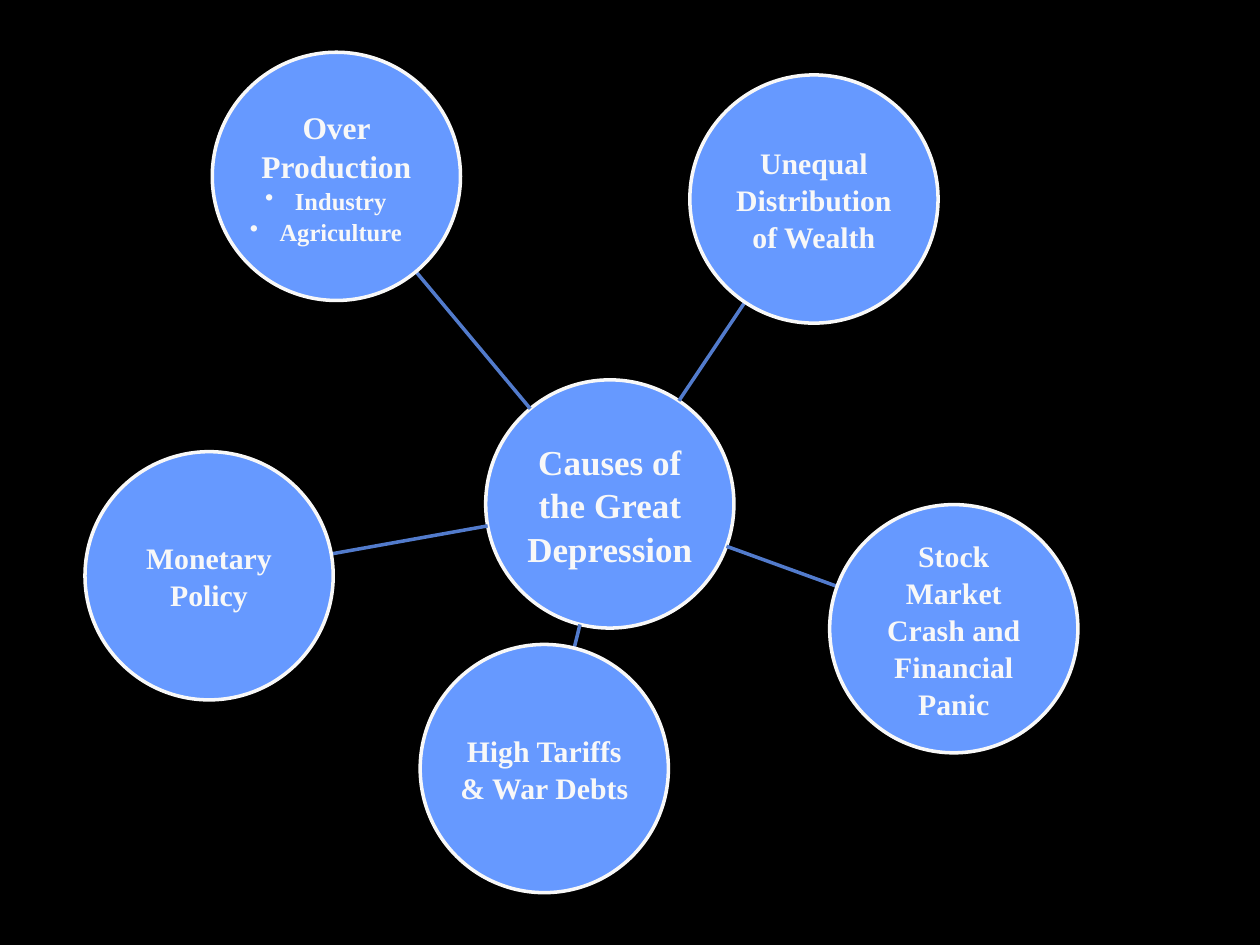
import math

from lxml import etree
from pptx import Presentation
from pptx import util as u
from pptx.dml.color import RGBColor
from pptx.enum import shapes, text
from pptx.oxml.ns import qn

# Content: circle centre in inches, then paragraphs of (words, size, bulleted)
HUB = ((4.84, 4.0), [("Causes of the Great Depression", 20, False)])
CAUSES = [
    ((1.66, 4.57), [("Monetary Policy", 17, False)]),
    ((2.67, 1.4), [("Over Production", 18, False),
                   ("Industry", 14, True),
                   ("Agriculture", 14, True)]),
    ((6.46, 1.58), [("Unequal Distribution of Wealth", 17, False)]),
    ((7.57, 4.99), [("Stock Market Crash and Financial Panic", 17, False)]),
    ((4.32, 6.1), [("High Tariffs & War Debts", 17, False)]),
]
DIAMETER = 1.97
FONT = "Times New Roman"
BACKGROUND, FILL, LIGHT, SPOKE = "000000", "6699FF", "F8F8F8", "527BCC"


def paint(color_format, value):
    color_format.rgb = RGBColor.from_string(value)


def add_circle(slide, center, paragraphs):
    left, top = (value - DIAMETER / 2 for value in center)
    shape = slide.shapes.add_shape(
        shapes.MSO_SHAPE.OVAL, u.Inches(left), u.Inches(top),
        u.Inches(DIAMETER), u.Inches(DIAMETER))
    shape.shadow.inherit = False
    shape.fill.solid()
    paint(shape.fill.fore_color, FILL)
    paint(shape.line.color, LIGHT)
    shape.line.width = u.Pt(2)

    frame = shape.text_frame
    frame.word_wrap = True
    frame.vertical_anchor = text.MSO_ANCHOR.MIDDLE
    frame.margin_left = frame.margin_right = u.Inches(0.01)
    frame.margin_top = frame.margin_bottom = u.Inches(0.01)
    for index, (words, size, bulleted) in enumerate(paragraphs):
        paragraph = frame.add_paragraph() if index else frame.paragraphs[0]
        paragraph.alignment = text.PP_ALIGN.CENTER
        paragraph.line_spacing = 1.04
        if bulleted:
            properties = paragraph._p.get_or_add_pPr()
            etree.SubElement(properties, qn("a:buChar"), char="•")
        run = paragraph.add_run()
        run.text = words
        run.font.name = FONT
        run.font.size = u.Pt(size)
        run.font.bold = True
        paint(run.font.color, LIGHT)


def add_spoke(slide, start, end):
    """Join the edges of two circles along the line between their centres."""
    reach = DIAMETER / 2 / math.dist(start, end)
    shift = [(b - a) * reach for a, b in zip(start, end)]
    points = ([a + s for a, s in zip(start, shift)]
              + [b - s for b, s in zip(end, shift)])
    connector = slide.shapes.add_connector(
        shapes.MSO_CONNECTOR.STRAIGHT, *(u.Inches(p) for p in points))
    paint(connector.line.color, SPOKE)
    connector.line.width = u.Pt(2)
    etree.SubElement(connector._element.spPr, qn("a:effectLst"))


def main():
    presentation = Presentation()
    presentation.slide_width = u.Inches(10)
    presentation.slide_height = u.Inches(7.5)
    slide = presentation.slides.add_slide(presentation.slide_layouts[6])
    slide.background.fill.solid()
    paint(slide.background.fill.fore_color, BACKGROUND)

    # Hub first, then each spoke with its cause
    hub_center, hub_text = HUB
    add_circle(slide, hub_center, hub_text)
    for center, paragraphs in CAUSES:
        add_spoke(slide, hub_center, center)
        add_circle(slide, center, paragraphs)

    presentation.save("out.pptx")


if __name__ == "__main__":
    main()
